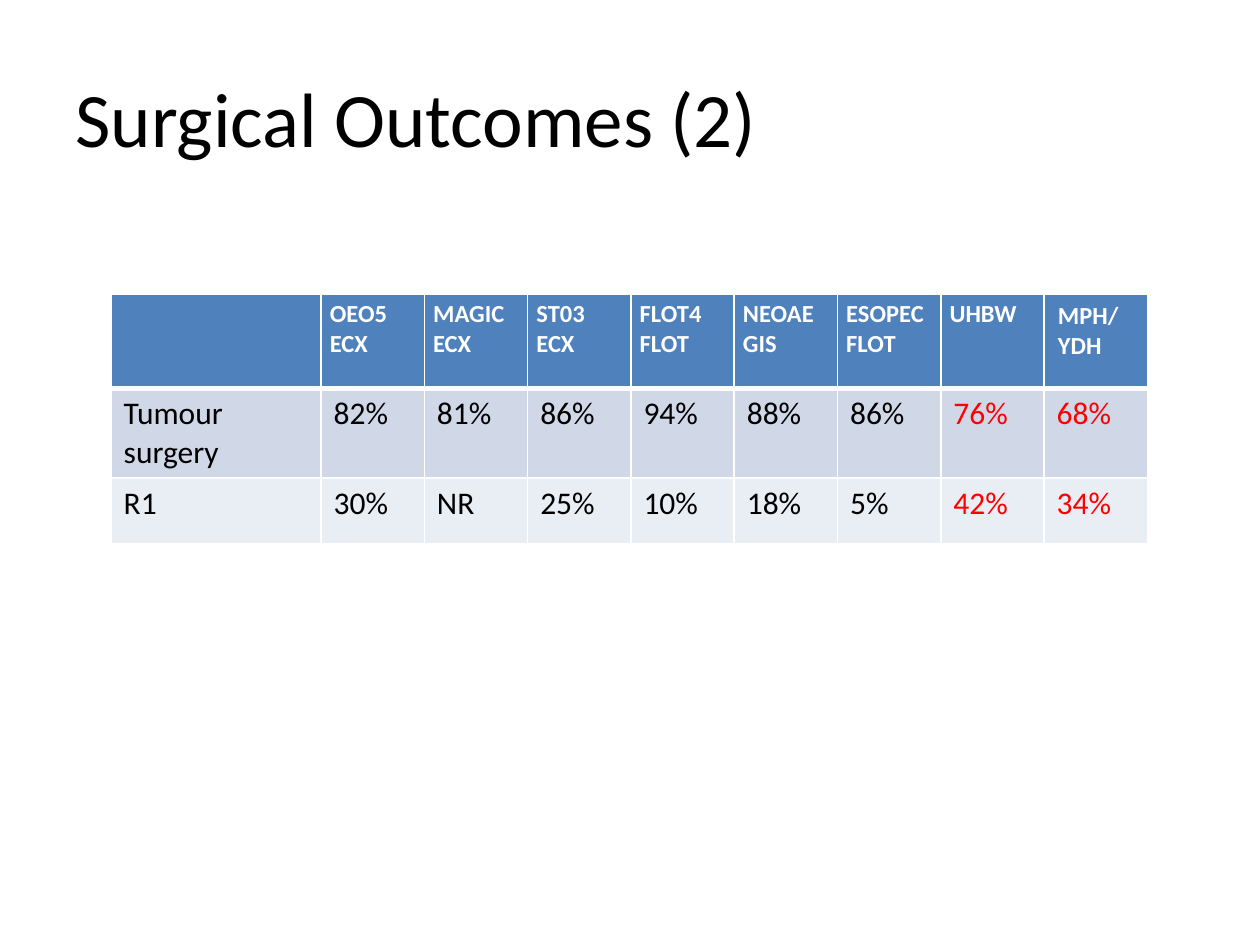
from lxml import etree
from pptx import Presentation
from pptx.dml.color import RGBColor
from pptx.enum.text import MSO_ANCHOR
from pptx.oxml.ns import qn
from pptx.util import Pt

MIDDLE = MSO_ANCHOR.MIDDLE
FONT = "Calibri"
WHITE, BLACK, RED = "FFFFFF", "000000", "FF0000"

TITLE = "Surgical Outcomes (2)"
ROWS = [
    ["", "OEO5\nECX", "MAGIC\nECX", "ST03\nECX", "FLOT4\nFLOT", "NEOAEGIS",
     "ESOPEC\nFLOT", "UHBW", "MPH/\nYDH"],
    ["Tumour surgery", "82%", "81%", "86%", "94%", "88%", "86%", "76%", "68%"],
    ["R1", "30%", "NR", "25%", "10%", "18%", "5%", "42%", "34%"],
]
FILLS = ["4F81BD", "D0D8E8", "E9EDF4"]
HEIGHTS = [54, 51, 38]
WIDTHS = [120] + [59.04] * 8
LEFT, TOP = 63.5, 168
LOCAL = 7  # first column of local results, shown in red


def color(code):
    return RGBColor.from_string(code)


def write(frame, text, size, ink, bold=False):
    for i, line in enumerate(text.split("\n")):
        para = frame.paragraphs[0] if i == 0 else frame.add_paragraph()
        run = para.add_run()
        run.text = line
        font = run.font
        font.name, font.size, font.bold = FONT, Pt(size), bold
        font.color.rgb = color(ink)


def border(cell, base):
    """Draw white cell edges; base is the width of the bottom one."""
    props = cell._tc.get_or_add_tcPr()
    edges = [("a:lnL", 1), ("a:lnR", 1), ("a:lnT", 1), ("a:lnB", base)]
    for i, (tag, width) in enumerate(edges):
        line = etree.Element(qn(tag), w=str(Pt(width)))
        fill = etree.SubElement(line, qn("a:solidFill"))
        etree.SubElement(fill, qn("a:srgbClr"), val=WHITE)
        props.insert(i, line)


def inset(cell, side, end):
    cell.margin_left = cell.margin_right = Pt(side)
    cell.margin_top = cell.margin_bottom = Pt(end)


def add_title(slide):
    frame = slide.shapes.add_textbox(Pt(36), Pt(21.6), Pt(648), Pt(90)).text_frame
    frame.word_wrap = True
    frame.vertical_anchor = MIDDLE
    write(frame, TITLE, 44, BLACK)


def add_grid(slide):
    grid = slide.shapes.add_table(
        len(ROWS), len(WIDTHS), Pt(LEFT), Pt(TOP),
        Pt(sum(WIDTHS)), Pt(sum(HEIGHTS))).table
    for col, width in zip(grid.columns, WIDTHS):
        col.width = Pt(width)
    for r, texts in enumerate(ROWS):
        grid.rows[r].height = Pt(HEIGHTS[r])
        head = r == 0
        for c, text in enumerate(texts):
            cell = grid.cell(r, c)
            cell.fill.solid()
            cell.fill.fore_color.rgb = color(FILLS[r])
            border(cell, 3 if head else 1)
            if head and c == len(texts) - 1:
                inset(cell, 7.9, 4.3)
            elif head:
                inset(cell, 5, 2.9)
            ink = WHITE if head else RED if c >= LOCAL else BLACK
            if text:
                write(cell.text_frame, text, 14 if head else 18, ink, head)


def main():
    deck = Presentation()
    deck.slide_width, deck.slide_height = Pt(720), Pt(540)
    slide = deck.slides.add_slide(deck.slide_layouts[6])
    add_title(slide)
    add_grid(slide)
    deck.save("out.pptx")


if __name__ == "__main__":
    main()
